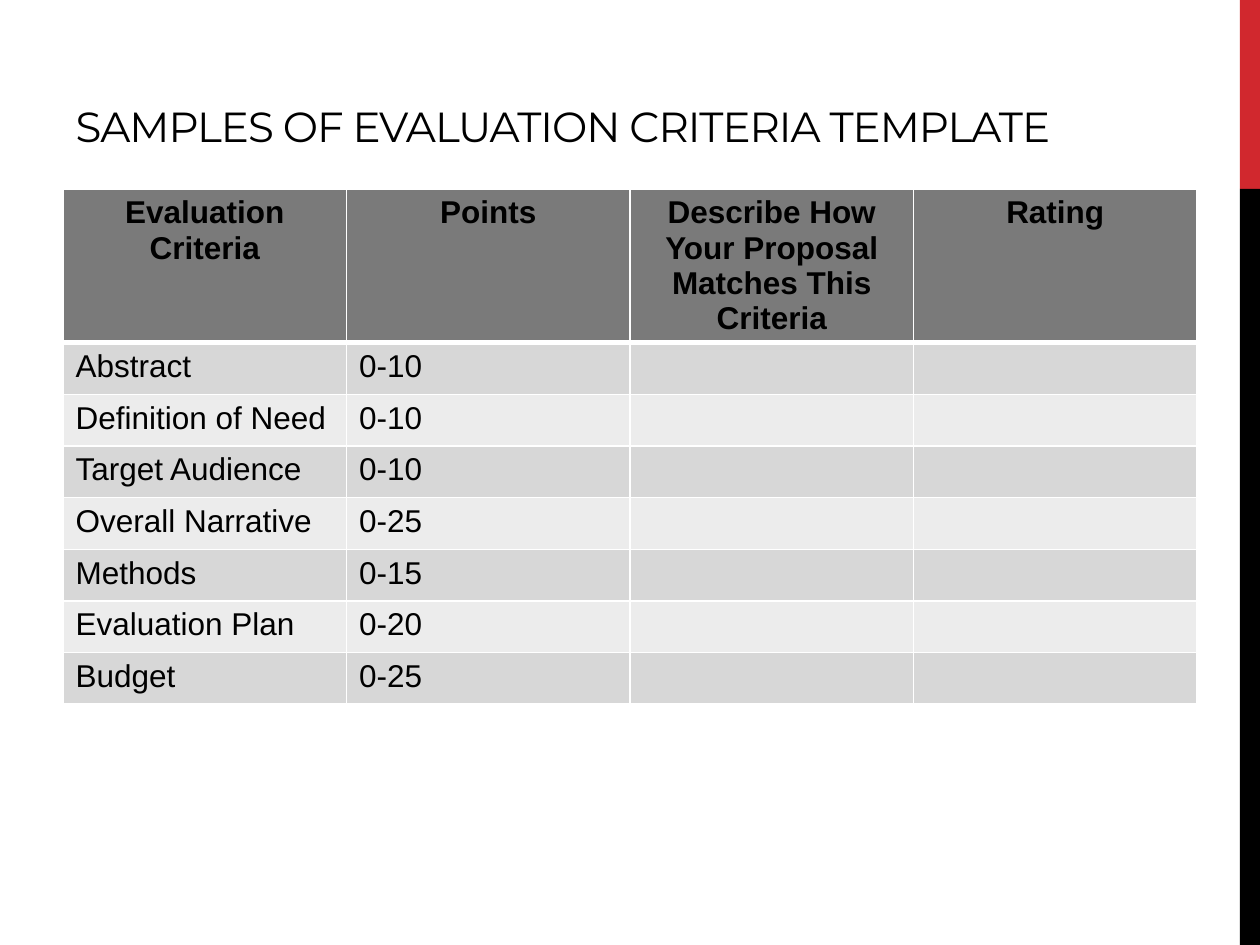
from pptx import Presentation, util as u
from pptx.dml.color import RGBColor
from pptx.enum import shapes, text
from pptx.oxml import parse_xml
from pptx.oxml.ns import nsdecls

RED = RGBColor(0xD1, 0x28, 0x2E)
BLACK = RGBColor(0, 0, 0)
WHITE = RGBColor(0xFF, 0xFF, 0xFF)
HEADER = RGBColor(0x7A, 0x7A, 0x7A)
BANDS = [RGBColor(0xD7, 0xD7, 0xD7), RGBColor(0xEC, 0xEC, 0xEC)]

WIDTH, HEIGHT = u.Inches(10), u.Inches(7.5)
MARGIN = WIDTH // 20
HEADER_H, ROW_H = u.Inches(1.2), u.Inches(0.41)

HEADINGS = ["Evaluation Criteria", "Points",
            "Describe How Your Proposal Matches This Criteria", "Rating"]
CRITERIA = [
    ("Abstract", "0-10"),
    ("Definition of Need", "0-10"),
    ("Target Audience", "0-10"),
    ("Overall Narrative", "0-25"),
    ("Methods", "0-15"),
    ("Evaluation Plan", "0-20"),
    ("Budget", "0-25"),
]


def format_font(font, color=BLACK, **values):
    for name, value in values.items():
        setattr(font, name, value)
    font.color.rgb = color


def add_side_bar(s, left, top, width, height):
    """Red top fifth over a black remainder."""
    red_h = height // 5
    for y, h, color in [(top, red_h, RED), (top + red_h, height - red_h, BLACK)]:
        sp = s.shapes.add_shape(shapes.MSO_SHAPE.RECTANGLE, left, y, width, h)
        sp.shadow.inherit = False
        sp.fill.solid()
        sp.fill.fore_color.rgb = color
        sp.line.fill.background()


def add_title(s, left, top, width, height):
    sp = s.shapes.title
    sp.left, sp.top, sp.width, sp.height = left, top, width, height
    tf = sp.text_frame
    tf.word_wrap = True
    tf.auto_size = text.MSO_AUTO_SIZE.NONE
    tf.vertical_anchor = text.MSO_ANCHOR.BOTTOM
    p = tf.paragraphs[0]
    p.alignment = text.PP_ALIGN.LEFT
    r = p.add_run()
    r.text = "SAMPLES OF EVALUATION CRITERIA TEMPLATE"
    format_font(r.font, name="Montserrat", size=u.Pt(24))
    r.font._element.set("spc", "-60")


def set_borders(cell, **points):
    """Draw white edges, given as L, R, T and B widths in points."""
    tc_pr = cell._tc.get_or_add_tcPr()
    for i, (side, width) in enumerate(points.items()):
        tc_pr.insert(i, parse_xml(
            f'<a:ln{side} {nsdecls("a")} w="{u.Pt(width)}"><a:solidFill>'
            f'<a:srgbClr val="{WHITE}"/></a:solidFill></a:ln{side}>'))


def add_criteria_table(s, left, top, width):
    n_rows, n_cols = len(CRITERIA) + 1, len(HEADINGS)
    height = HEADER_H + ROW_H * len(CRITERIA)
    table = s.shapes.add_table(n_rows, n_cols, left, top, width, height).table
    for column in table.columns:
        column.width = width // n_cols
    for i, row in enumerate(table.rows):
        is_header = i == 0
        row.height = HEADER_H if is_header else ROW_H
        values = HEADINGS if is_header else CRITERIA[i - 1]
        for j, cell in enumerate(row.cells):
            cell.fill.solid()
            cell.fill.fore_color.rgb = HEADER if is_header else BANDS[(i - 1) % 2]
            set_borders(cell, L=1, R=1, T=3 if i == 1 else 1,
                        B=3 if is_header else 1)
            p = cell.text_frame.paragraphs[0]
            p.alignment = text.PP_ALIGN.CENTER if is_header else text.PP_ALIGN.LEFT
            font = dict(name="Arial", size=u.Pt(18), bold=is_header)
            if j < len(values):
                r = p.add_run()
                r.text = values[j]
                format_font(r.font, **font)


def main():
    prs = Presentation()
    prs.slide_width, prs.slide_height = WIDTH, HEIGHT
    s = prs.slides.add_slide(prs.slide_layouts[5])
    bar_w = u.Inches(0.16)
    add_side_bar(s, WIDTH - bar_w, 0, bar_w, HEIGHT)
    add_title(s, MARGIN, u.Inches(0.17), WIDTH - 2 * MARGIN, u.Inches(1.08))
    add_criteria_table(s, MARGIN, HEIGHT // 5, WIDTH - 2 * MARGIN)
    prs.save("out.pptx")


if __name__ == "__main__":
    main()
